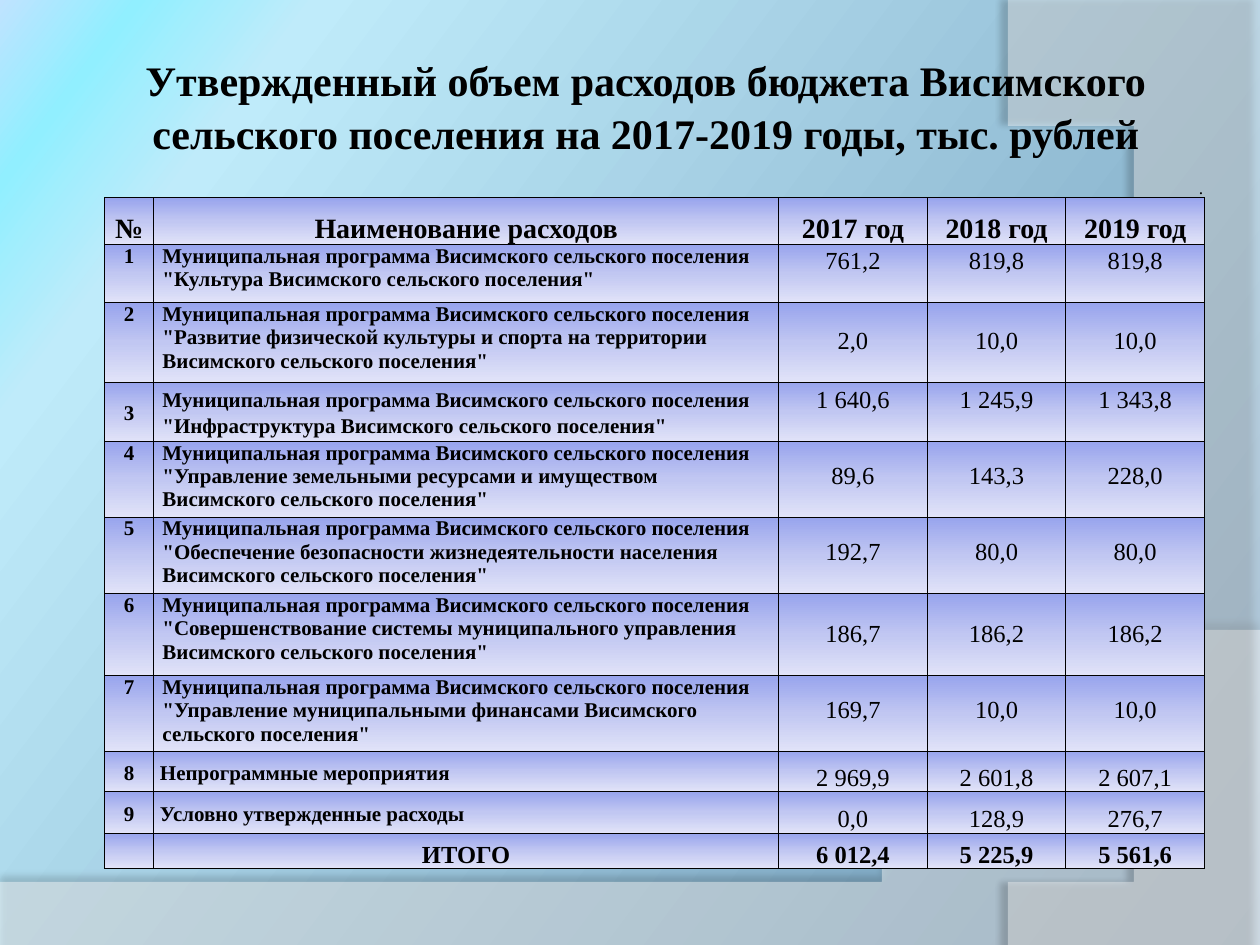
import dataclasses
import typing

import lxml.etree
import pptx
import pptx.dml.color
import pptx.enum.text
import pptx.oxml
import pptx.oxml.ns
import pptx.util

Inches = pptx.util.Inches
Pt = pptx.util.Pt
Align = pptx.enum.text.PP_ALIGN
Anchor = pptx.enum.text.MSO_ANCHOR
Point = tuple[float, float]
Stops = tuple[tuple[int, str], ...]


@dataclasses.dataclass(frozen=True)
class Theme:
    font: str = "Times New Roman"
    text: str = "000000"
    wave: str = "FFFFFF"
    border_width: float = 0.5
    title_size: int = 24
    header_size: int = 16
    value_size: int = 14
    name_size: int = 12
    note_size: int = 10
    no_style: str = "{2D5ABB26-0587-4C30-8999-92F81FD0307C}"
    page_stops: Stops = ((0, "6D95B4"), (84, "BFEBFA"), (93, "91EFFF"), (100, "BFE3FF"))
    cell_stops: Stops = ((0, "98A4ED"), (50, "C1C7F2"), (100, "E1E3F8"))


@dataclasses.dataclass(frozen=True)
class Wave:
    start: list[Point]
    curve: tuple[Point, Point, Point, Point]
    opacity: int
    shadow_opacity: int
    shadow_distance: float
    shadow_angle: int


@dataclasses.dataclass(frozen=True)
class Style:
    size: int
    bold: bool = False
    align: Align = Align.CENTER
    anchor: Anchor = Anchor.BOTTOM
    side: float = 0.01
    top: float = 0.01
    bottom: float = 0
    spacing: float = 1.0


@dataclasses.dataclass(frozen=True)
class Expense:
    name: str
    values: tuple[str, str, str]
    height: float
    program: bool = True
    spaced: bool = False


THEME = Theme()
WAVES = [
    Wave([(0, 7.05), (0, 7.5), (10, 7.5), (10, 5.2)],
         ((10, 5.2), (5.59, 7.29), (3.91, 7.19), (0, 7.05)), 45, 35, 3.5, 270),
    Wave([(10, 0.02), (10, 7.5), (8.21, 7.5)],
         ((8.21, 7.5), (9.35, 6.19), (10.18, 3), (8, 0)), 40, 45, 4, 180),
]
TITLE = ("Утвержденный объем расходов бюджета Висимского "
         "сельского поселения на 2017-2019 годы, тыс. рублей")
PROGRAM = "Муниципальная программа Висимского сельского поселения "
HEADERS = ["№", "Наименование расходов", "2017 год", "2018 год", "2019 год"]
COLUMNS = [0.39, 4.96, 1.18, 1.1, 1.1]
EXPENSES = [
    Expense('"Культура Висимского сельского поселения"', ("761,2", "819,8", "819,8"), 0.44),
    Expense('"Развитие физической культуры и спорта на территории Висимского сельского поселения"',
            ("2,0", "10,0", "10,0"), 0.63),
    Expense('"Инфраструктура Висимского сельского поселения"',
            ("1 640,6", "1 245,9", "1 343,8"), 0.47, spaced=True),
    Expense('"Управление земельными ресурсами и имуществом Висимского сельского поселения"',
            ("89,6", "143,3", "228,0"), 0.55),
    Expense('"Обеспечение безопасности жизнедеятельности населения Висимского сельского поселения"',
            ("192,7", "80,0", "80,0"), 0.61),
    Expense('"Совершенствование системы муниципального управления Висимского сельского поселения"',
            ("186,7", "186,2", "186,2"), 0.65),
    Expense('"Управление муниципальными финансами Висимского сельского поселения"',
            ("169,7", "10,0", "10,0"), 0.58),
    Expense("Непрограммные мероприятия", ("2 969,9", "2 601,8", "2 607,1"), 0.32, False, True),
    Expense("Условно утвержденные расходы", ("0,0", "128,9", "276,7"), 0.33, False, True),
]
TOTAL = ["", "ИТОГО", "6 012,4", "5 225,9", "5 561,6"]


def drawing_xml(body: str) -> typing.Any:
    space = pptx.oxml.ns.nsdecls("a")
    return pptx.oxml.parse_xml(body.replace(">", f" {space}>", 1))


def gradient(stops: Stops, angle: int) -> typing.Any:
    marks = "".join(f'<a:gs pos="{place * 1000}"><a:srgbClr val="{color}"/></a:gs>'
                    for place, color in stops)
    return drawing_xml(f'<a:gradFill rotWithShape="1"><a:gsLst>{marks}</a:gsLst>'
                       f'<a:lin ang="{angle * 60000}" scaled="0"/></a:gradFill>')


def assign(target: typing.Any, values: dict[str, typing.Any]) -> None:
    for name, value in values.items():
        setattr(target, name, value)


def write(para: typing.Any, text: str, style: Style) -> None:
    assign(para, {"alignment": style.align, "line_spacing": style.spacing})
    if not text:
        end = lxml.etree.SubElement(para._p, pptx.oxml.ns.qn("a:endParaRPr"))
        end.set("sz", str(style.size * 100))
        return
    span = para.add_run()
    span.text = text
    assign(span.font, {"name": THEME.font, "size": Pt(style.size), "bold": style.bold})
    span.font.color.rgb = pptx.dml.color.RGBColor.from_string(THEME.text)


def paint_page(page: typing.Any) -> None:
    page.background.fill.solid()
    solid = page.background._cSld.bg.bgPr[0]
    solid.getparent().replace(solid, gradient(THEME.page_stops, 217))


def draw_wave(page: typing.Any, wave: Wave, steps: int = 40) -> None:
    points = list(wave.start)
    for step in range(1, steps + 1):
        t = step / steps
        weights = ((1 - t) ** 3, 3 * t * (1 - t) ** 2, 3 * t ** 2 * (1 - t), t ** 3)
        points.append(tuple(sum(w * p[axis] for w, p in zip(weights, wave.curve))
                            for axis in (0, 1)))
    builder = page.shapes.build_freeform(*points[0], scale=Inches(1))
    builder.add_line_segments(points[1:], close=True)
    shape = builder.convert_to_shape()
    shape.line.fill.background()
    shape.fill.solid()
    shape.fill.fore_color.rgb = pptx.dml.color.RGBColor.from_string(THEME.wave)
    color = shape._element.spPr.find(".//" + pptx.oxml.ns.qn("a:srgbClr"))
    color.append(drawing_xml(f'<a:alpha val="{wave.opacity * 1000}"></a:alpha>'))
    shape._element.spPr.append(drawing_xml(
        f'<a:effectLst><a:outerShdw blurRad="{Pt(4)}" dist="{Pt(wave.shadow_distance)}" '
        f'dir="{wave.shadow_angle * 60000}" rotWithShape="0"><a:srgbClr val="{THEME.text}">'
        f'<a:alpha val="{wave.shadow_opacity * 1000}"/></a:srgbClr></a:outerShdw></a:effectLst>'))


def draw_title(page: typing.Any) -> None:
    box = page.shapes.add_textbox(Inches(0.59), Inches(0.44), Inches(9.07), Inches(0.79))
    assign(box.text_frame, {"word_wrap": True, "vertical_anchor": Anchor.MIDDLE})
    write(box.text_frame.paragraphs[0], TITLE, Style(THEME.title_size, True, spacing=1.05))


def fill_cell(cell: typing.Any, text: str, style: Style, framed: bool = True) -> None:
    assign(cell, {"vertical_anchor": style.anchor,
                  "margin_left": Inches(style.side), "margin_right": Inches(style.side),
                  "margin_top": Inches(style.top), "margin_bottom": Inches(style.bottom)})
    write(cell.text_frame.paragraphs[0], text, style)
    properties = cell._tc.get_or_add_tcPr()
    for side in ("lnL", "lnR", "lnT", "lnB") if framed else ("lnB",):
        properties.append(drawing_xml(
            f'<a:{side} w="{Pt(THEME.border_width)}"><a:solidFill>'
            f'<a:srgbClr val="{THEME.text}"/></a:solidFill></a:{side}>'))
    properties.append(gradient(THEME.cell_stops, 90) if framed
                      else drawing_xml("<a:noFill></a:noFill>"))


def expense_styles(expense: Expense) -> list[Style]:
    number = Style(THEME.name_size, True, top=0, side=0.07 if expense.program else 0.05,
                   anchor=Anchor.MIDDLE if expense.spaced else Anchor.TOP,
                   spacing=1.15 if expense.spaced else 1.0)
    value = Style(THEME.value_size, bottom=0.22 if expense.program else 0)
    return [number, dataclasses.replace(number, align=Align.LEFT)] + [value] * 3


def draw_table(page: typing.Any) -> None:
    note = Style(THEME.note_size, align=Align.RIGHT)
    rows = [(0.18, ["", "", "", "", "."], [note] * 5),
            (0.37, HEADERS, [Style(THEME.header_size, True)] * 5)]
    for number, expense in enumerate(EXPENSES, 1):
        name = (PROGRAM if expense.program else "") + expense.name
        rows.append((expense.height, [str(number), name, *expense.values],
                     expense_styles(expense)))
    rows.append((0.28, TOTAL, [Style(THEME.value_size, True)] * 5))
    frame = page.shapes.add_table(len(rows), len(COLUMNS), Inches(0.83), Inches(1.39),
                                  Inches(sum(COLUMNS)), Inches(sum(row[0] for row in rows)))
    table = frame.table
    assign(table, {"first_row": False, "horz_banding": False})
    table._tbl.tblPr.find(pptx.oxml.ns.qn("a:tableStyleId")).text = THEME.no_style
    for column, width in zip(table.columns, COLUMNS):
        column.width = Inches(width)
    for index, (height, texts, styles) in enumerate(rows):
        table.rows[index].height = Inches(height)
        for cell, text, style in zip(table.rows[index].cells, texts, styles):
            fill_cell(cell, text, style, framed=index > 0)


def main() -> None:
    deck = pptx.Presentation()
    assign(deck, {"slide_width": Inches(10), "slide_height": Inches(7.5)})
    page = deck.slides.add_slide(deck.slide_layouts[6])
    paint_page(page)
    for wave in WAVES:
        draw_wave(page, wave)
    draw_title(page)
    draw_table(page)
    deck.save("out.pptx")


if __name__ == "__main__":
    main()
